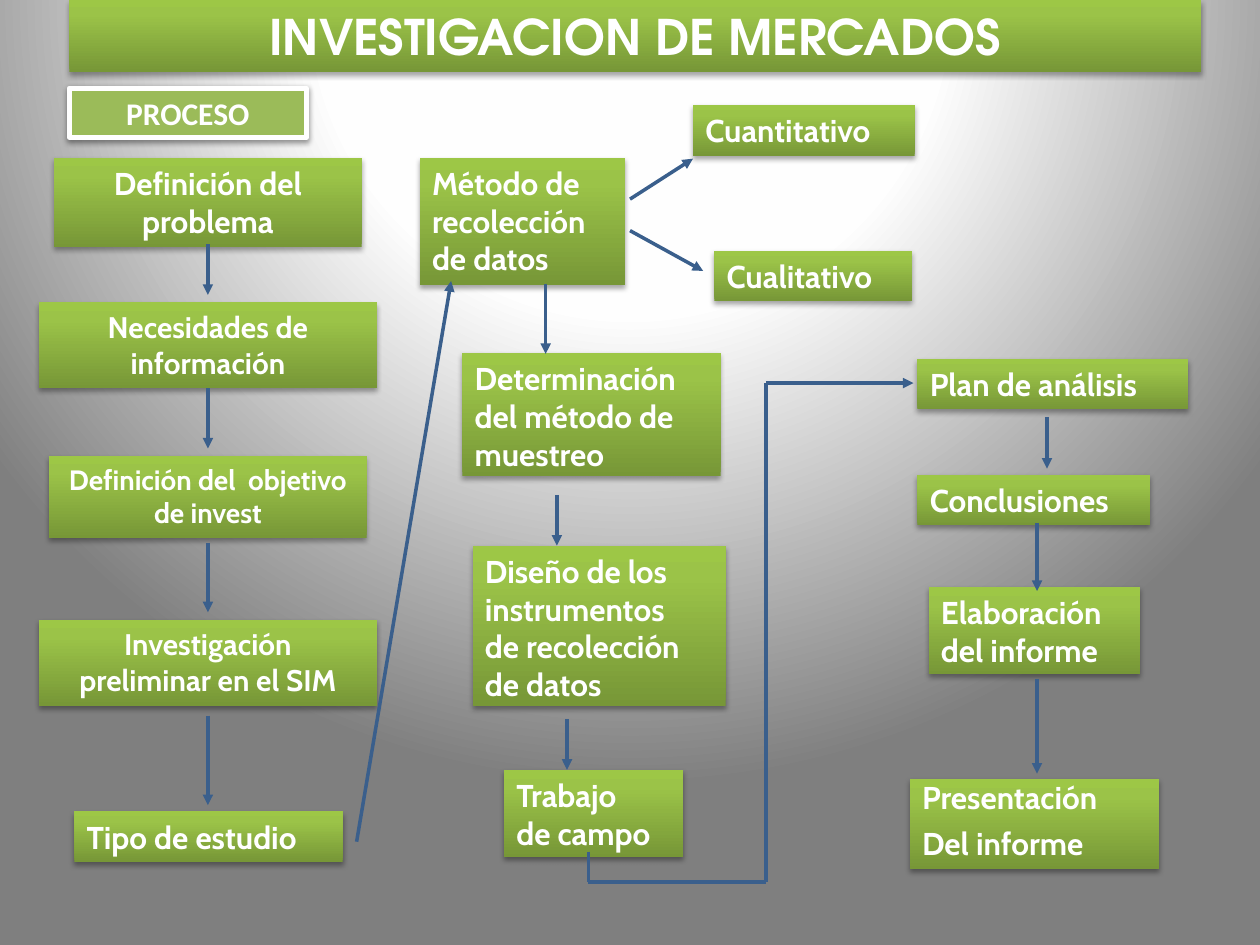
from itertools import pairwise

from pptx import Presentation
from pptx.dml.color import RGBColor
from pptx.enum.shapes import MSO_CONNECTOR as Connector, MSO_SHAPE as Shape
from pptx.enum.text import MSO_ANCHOR as Anchor, MSO_AUTO_SIZE as AutoSize, PP_ALIGN as Align
from pptx.oxml import parse_xml
from pptx.oxml.ns import nsdecls
from pptx.util import Pt

WHITE = "FFFFFF"
ARROW_BLUE = "3A5F8C"
GREEN_STOPS = [(0, "779737"), (80, "9BC348"), (100, "9DC746")]
BACKGROUND_STOPS = [(0, "FFFFFF"), (40, "FEFEFE"), (100, "7F7F7F")]
CENTERED = {"align": Align.CENTER}

STEPS = [
    (31, 90, 175.7, 51.1, "Definición del problema", CENTERED),
    (22.3, 172.8, 193, 49, "Necesidades de información", {"size": 17, **CENTERED}),
    (28.1, 260.6, 181.4, 46.8, "Definición del  objetivo de invest", {"size": 16, **CENTERED}),
    (22.3, 354.2, 193, 49, "Investigación\npreliminar en el SIM", {"size": 17, **CENTERED}),
    (42.5, 463.7, 153.4, 28.8, "Tipo de estudio", {}),
    (239.8, 90, 117.4, 72.7, "Método de\nrecolección\nde datos", {}),
    (396, 59.8, 126.7, 29.5, "Cuantitativo", {}),
    (408.2, 143.3, 113, 28.8, "Cualitativo", {}),
    (264.2, 201.6, 147.6, 70.6, "Determinación\ndel método de\nmuestreo", {}),
    (270, 311.8, 144.7, 91.4, "Diseño de los\ninstrumentos\nde recolección\nde datos", {}),
    (288, 439.9, 102.2, 49.7, "Trabajo\nde campo", {}),
    (524.2, 205.2, 154.8, 28.8, "Plan de análisis", {}),
    (524.2, 271.4, 133.2, 28.8, "Conclusiones", {}),
    (530.6, 335.5, 121, 49.7, "Elaboración\ndel informe", {}),
    (519.8, 445, 142.6, 51.8, "Presentación\nDel informe", {"spacing": 0.8, "before": 9}),
]

DOWN_ARROWS = {
    118.8: [(139.7, 168.5), (221.8, 256.3), (310.3, 349.9), (409, 460.1)],
    311.8: [(162, 202.3)],
    318.2: [(283, 311.8)],
    324: [(411.1, 439.9)],
    598.3: [(238.3, 267.8)],
    592.6: [(298.8, 337.7), (388.1, 442.1)],
}
SLANTED_ARROWS = [
    ((360, 113.8), (396, 90.7)),
    ((360, 131.8), (401.8, 154.8)),
    ((203.8, 481), (257.8, 160.6)),
]
ANALYSIS_ROUTE = [(336.2, 486.7), (336.2, 504), (437.8, 504), (437.8, 218.9), (522, 218.9)]


def color(value):
    return RGBColor.from_string(value)


def gradient_xml(stops, direction):
    stop_xml = "".join(
        f'<a:gs pos="{position * 1000}"><a:srgbClr val="{value}"/></a:gs>'
        for position, value in stops
    )
    return (f'<a:gradFill {nsdecls("a")} rotWithShape="1">'
            f"<a:gsLst>{stop_xml}</a:gsLst>{direction}</a:gradFill>")


def set_background(slide):
    direction = ('<a:path path="circle">'
                 '<a:fillToRect l="50000" t="-80000" r="50000" b="180000"/></a:path>')
    background = parse_xml(
        f'<p:bg {nsdecls("p", "a")}><p:bgPr>{gradient_xml(BACKGROUND_STOPS, direction)}'
        "<a:effectLst/></p:bgPr></p:bg>"
    )
    slide.element.cSld.insert(0, background)


def set_green_gradient(shape):
    shape.fill.solid()
    properties = shape.element.spPr
    solid = properties.find("{*}solidFill")
    direction = '<a:lin ang="16200000" scaled="0"/>'
    properties.replace(solid, parse_xml(gradient_xml(GREEN_STOPS, direction)))


def set_shadow(shape, opacity, distance):
    shape.shadow.inherit = False
    effects = shape.element.spPr.find("{*}effectLst")
    effects.append(parse_xml(
        f'<a:outerShdw {nsdecls("a")} blurRad="{Pt(3.1)}" dist="{Pt(distance)}" '
        'dir="5400000" rotWithShape="0"><a:srgbClr val="000000">'
        f'<a:alpha val="{opacity * 1000}"/></a:srgbClr></a:outerShdw>'
    ))


def write_text(shape, text, size=18, font="Cabin", align=Align.LEFT, anchor=Anchor.TOP,
               auto_size=AutoSize.SHAPE_TO_FIT_TEXT, spacing=None, before=None):
    frame = shape.text_frame
    frame.word_wrap = True
    frame.auto_size = auto_size
    frame.vertical_anchor = anchor
    frame.text = text
    for paragraph in frame.paragraphs:
        paragraph.alignment = align
        paragraph.line_spacing = spacing
        if before:
            paragraph.space_before = Pt(before)
        run_font = paragraph.runs[0].font
        run_font.name = font
        run_font.size = Pt(size)
        run_font.bold = True
        run_font.color.rgb = color(WHITE)


def add_rectangle(slide, left, top, width, height):
    return slide.shapes.add_shape(
        Shape.RECTANGLE, Pt(left), Pt(top), Pt(width), Pt(height))


def add_green_box(slide, left, top, width, height, text, **text_format):
    shape = add_rectangle(slide, left, top, width, height)
    set_green_gradient(shape)
    shape.line.fill.background()
    set_shadow(shape, 35, 1.8)
    write_text(shape, text, **text_format)


def add_process_label(slide):
    shape = add_rectangle(slide, 39.6, 50.4, 135.4, 28.1)
    shape.fill.solid()
    shape.fill.fore_color.rgb = color("9BBB59")
    shape.line.color.rgb = color(WHITE)
    shape.line.width = Pt(3)
    set_shadow(shape, 38, 1.6)
    write_text(shape, "PROCESO", font="Calibri", align=Align.CENTER,
               anchor=Anchor.MIDDLE, auto_size=AutoSize.NONE)


def add_line(slide, start, end, arrow=True):
    points = [Pt(value) for value in (*start, *end)]
    connector = slide.shapes.add_connector(Connector.STRAIGHT, *points)
    connector.line.color.rgb = color(ARROW_BLUE)
    connector.line.width = Pt(2)
    if arrow:
        connector.line._get_or_add_ln().append(
            parse_xml(f'<a:tailEnd {nsdecls("a")} type="triangle"/>'))
    connector.element.spPr.append(parse_xml(f'<a:effectLst {nsdecls("a")}/>'))


def main():
    presentation = Presentation()
    presentation.slide_width = Pt(720)
    presentation.slide_height = Pt(540)
    slide = presentation.slides.add_slide(presentation.slide_layouts[6])
    set_background(slide)
    add_green_box(slide, 39.6, 0, 646.6, 41, "INVESTIGACION DE MERCADOS",
                  size=28, font="TeX Gyre Adventor", align=Align.CENTER)
    add_process_label(slide)
    for *box, text, text_format in STEPS:
        add_green_box(slide, *box, text, **text_format)
    for x, spans in DOWN_ARROWS.items():
        for top, bottom in spans:
            add_line(slide, (x, top), (x, bottom))
    for start, end in SLANTED_ARROWS:
        add_line(slide, start, end)
    for start, end in pairwise(ANALYSIS_ROUTE):
        add_line(slide, start, end, arrow=end == ANALYSIS_ROUTE[-1])
    presentation.save("out.pptx")


if __name__ == "__main__":
    main()
